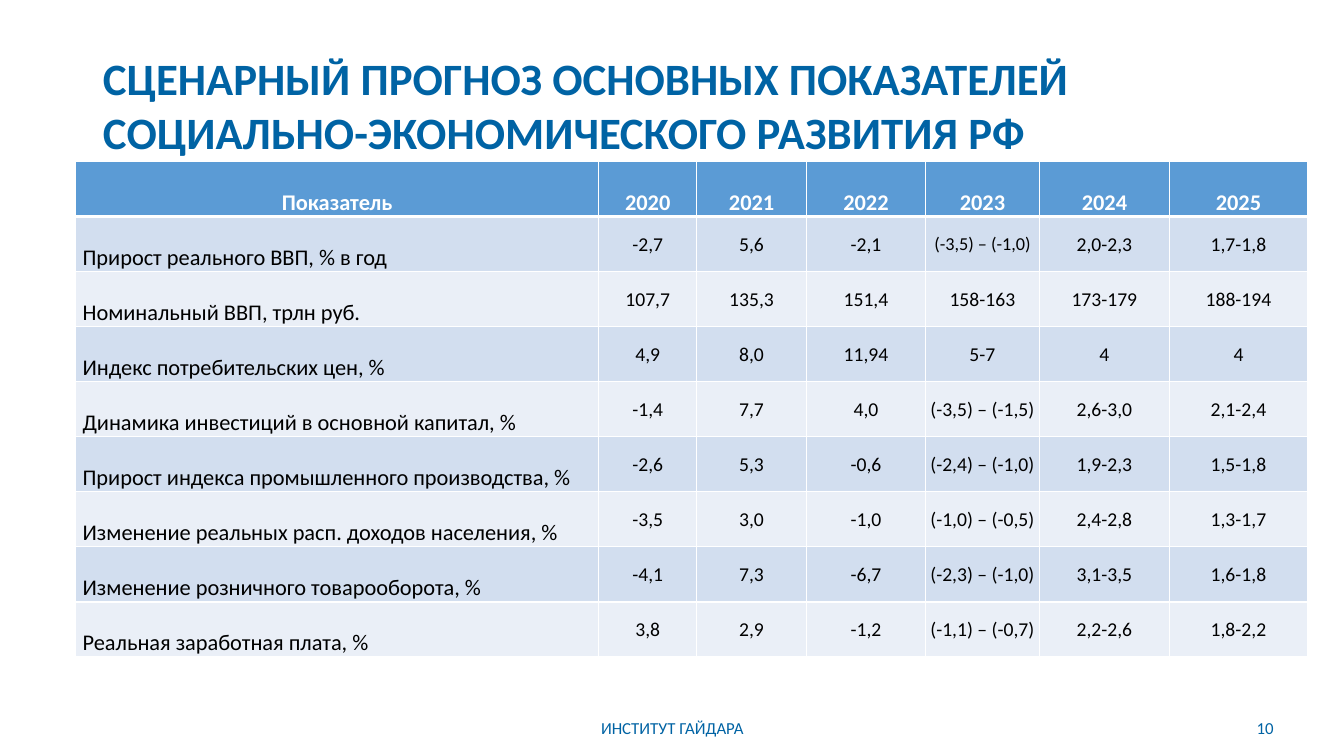
from dataclasses import dataclass

import pptx
import pptx.dml.color
import pptx.enum.text
import pptx.oxml
import pptx.oxml.ns
import pptx.util
from pptx.util import Inches

PP_ALIGN = pptx.enum.text.PP_ALIGN
MIDDLE = pptx.enum.text.MSO_ANCHOR.MIDDLE
FONT = "Calibri"
COLORS = {
    "brand": "0063A4",
    "header": "5B9BD5",
    "odd": "D2DEEF",
    "even": "EAEFF7",
    "white": "FFFFFF",
    "black": "000000",
}


@dataclass
class Label:
    """Footer text with its box in inches."""
    text: str
    left: float
    width: float
    align: PP_ALIGN


@dataclass
class CellStyle:
    """Text and margin settings shared by a kind of table cell."""
    size: float
    color: str
    bold: bool
    align: PP_ALIGN
    spacing: float
    side: float
    top: float


HEADER = CellStyle(16, "white", True, PP_ALIGN.CENTER, 2, 0.07, 0)
NAME = CellStyle(16, "black", False, PP_ALIGN.LEFT, 2, 0.07, 0)
VALUE = CellStyle(14, "black", False, PP_ALIGN.CENTER, 1, 0.01, 0.01)
TIGHT_VALUE = CellStyle(13, "black", False, PP_ALIGN.CENTER, 1, 0.01, 0.01)

FOOTER = [
    Label("ИНСТИТУТ ГАЙДАРА", 4.42, 4.5, PP_ALIGN.CENTER),
    Label("10", 9.73, 3, PP_ALIGN.RIGHT),
]
COLUMN_WIDTHS = [5.19, 0.97, 1.09, 1.18, 1.13, 1.29, 1.37]
TABLE_HEIGHT = 4.92
FORECAST = [
    ["Показатель", "2020", "2021", "2022", "2023", "2024", "2025"],
    ["Прирост реального ВВП, % в год",
     "-2,7", "5,6", "-2,1", "(-3,5) – (-1,0)", "2,0-2,3", "1,7-1,8"],
    ["Номинальный ВВП, трлн руб.",
     "107,7", "135,3", "151,4", "158-163", "173-179", "188-194"],
    ["Индекс потребительских цен, %",
     "4,9", "8,0", "11,94", "5-7", "4", "4"],
    ["Динамика инвестиций в основной капитал, %",
     "-1,4", "7,7", "4,0", "(-3,5) – (-1,5)", "2,6-3,0", "2,1-2,4"],
    ["Прирост индекса промышленного производства, %",
     "-2,6", "5,3", "-0,6", "(-2,4) – (-1,0)", "1,9-2,3", "1,5-1,8"],
    ["Изменение реальных расп. доходов населения, %",
     "-3,5", "3,0", "-1,0", "(-1,0) – (-0,5)", "2,4-2,8", "1,3-1,7"],
    ["Изменение розничного товарооборота, %",
     "-4,1", "7,3", "-6,7", "(-2,3) – (-1,0)", "3,1-3,5", "1,6-1,8"],
    ["Реальная заработная плата, %",
     "3,8", "2,9", "-1,2", "(-1,1) – (-0,7)", "2,2-2,6", "1,8-2,2"],
]


def rgb(name: str) -> pptx.dml.color.RGBColor:
    return pptx.dml.color.RGBColor.from_string(COLORS[name])


def format_paragraph(p, size: float, color: str, bold: bool, align: PP_ALIGN) -> None:
    p.alignment = align
    p.font.name = FONT
    p.font.size = pptx.util.Pt(size)
    p.font.bold = bold
    p.font.color.rgb = rgb(color)


def add_title(slide, text: str) -> None:
    sp = slide.shapes.title
    sp.left, sp.top = Inches(0.92), Inches(0.26)
    sp.width, sp.height = Inches(10.87), Inches(1.56)
    tf = sp.text_frame
    tf.text = text
    tf.word_wrap = True
    tf.auto_size = pptx.enum.text.MSO_AUTO_SIZE.NONE
    tf.vertical_anchor = MIDDLE
    format_paragraph(tf.paragraphs[0], 32, "brand", True, PP_ALIGN.LEFT)


def add_label(slide, label: Label) -> None:
    sp = slide.shapes.add_textbox(
        Inches(label.left), Inches(7.02), Inches(label.width), Inches(0.4))
    tf = sp.text_frame
    tf.word_wrap = True
    tf.vertical_anchor = MIDDLE
    tf.text = label.text
    format_paragraph(tf.paragraphs[0], 12, "brand", False, label.align)


def set_borders(cell, top: float, bottom: float) -> None:
    """Draw white borders; widths are in points."""
    tc_pr = cell._tc.get_or_add_tcPr()
    sides = [("L", 1), ("R", 1), ("T", top), ("B", bottom)]
    for i, (side, width) in enumerate(sides):
        tc_pr.insert(i, pptx.oxml.parse_xml(
            f'<a:ln{side} {pptx.oxml.ns.nsdecls("a")} w="{pptx.util.Pt(width)}">'
            f'<a:solidFill><a:srgbClr val="{COLORS["white"]}"/></a:solidFill>'
            f'</a:ln{side}>'))


def fill_cell(cell, text: str, style: CellStyle, fill: str) -> None:
    cell.text = text
    cell.vertical_anchor = MIDDLE
    cell.margin_left = cell.margin_right = Inches(style.side)
    cell.margin_top, cell.margin_bottom = Inches(style.top), 0
    cell.fill.solid()
    cell.fill.fore_color.rgb = rgb(fill)
    p = cell.text_frame.paragraphs[0]
    p.line_spacing = float(style.spacing)
    format_paragraph(p, style.size, style.color, style.bold, style.align)


def cell_style(row: int, col: int) -> CellStyle:
    if row == 0:
        return HEADER
    if col == 0:
        return NAME
    return TIGHT_VALUE if (row, col) == (1, 4) else VALUE


def add_forecast(slide) -> None:
    table = slide.shapes.add_table(
        len(FORECAST), len(COLUMN_WIDTHS), Inches(0.75), Inches(1.6),
        Inches(sum(COLUMN_WIDTHS)), Inches(TABLE_HEIGHT)).table
    for column, width in zip(table.columns, COLUMN_WIDTHS):
        column.width = Inches(width)
    for r, values in enumerate(FORECAST):
        table.rows[r].height = Inches(TABLE_HEIGHT / len(FORECAST))
        fill = "header" if r == 0 else "odd" if r % 2 else "even"
        for c, text in enumerate(values):
            cell = table.cell(r, c)
            fill_cell(cell, text, cell_style(r, c), fill)
            set_borders(cell, top=3 if r == 1 else 1, bottom=3 if r == 0 else 1)


def main() -> None:
    prs = pptx.Presentation()
    prs.slide_width, prs.slide_height = Inches(13.33), Inches(7.5)
    slide = prs.slides.add_slide(prs.slide_layouts.get_by_name("Title Only"))

    # Title
    add_title(slide, "СЦЕНАРНЫЙ ПРОГНОЗ ОСНОВНЫХ ПОКАЗАТЕЛЕЙ "
                     "СОЦИАЛЬНО-ЭКОНОМИЧЕСКОГО РАЗВИТИЯ РФ")

    # Footer and page number
    for label in FOOTER:
        add_label(slide, label)

    # Forecast table
    add_forecast(slide)

    prs.save("out.pptx")


if __name__ == "__main__":
    main()
